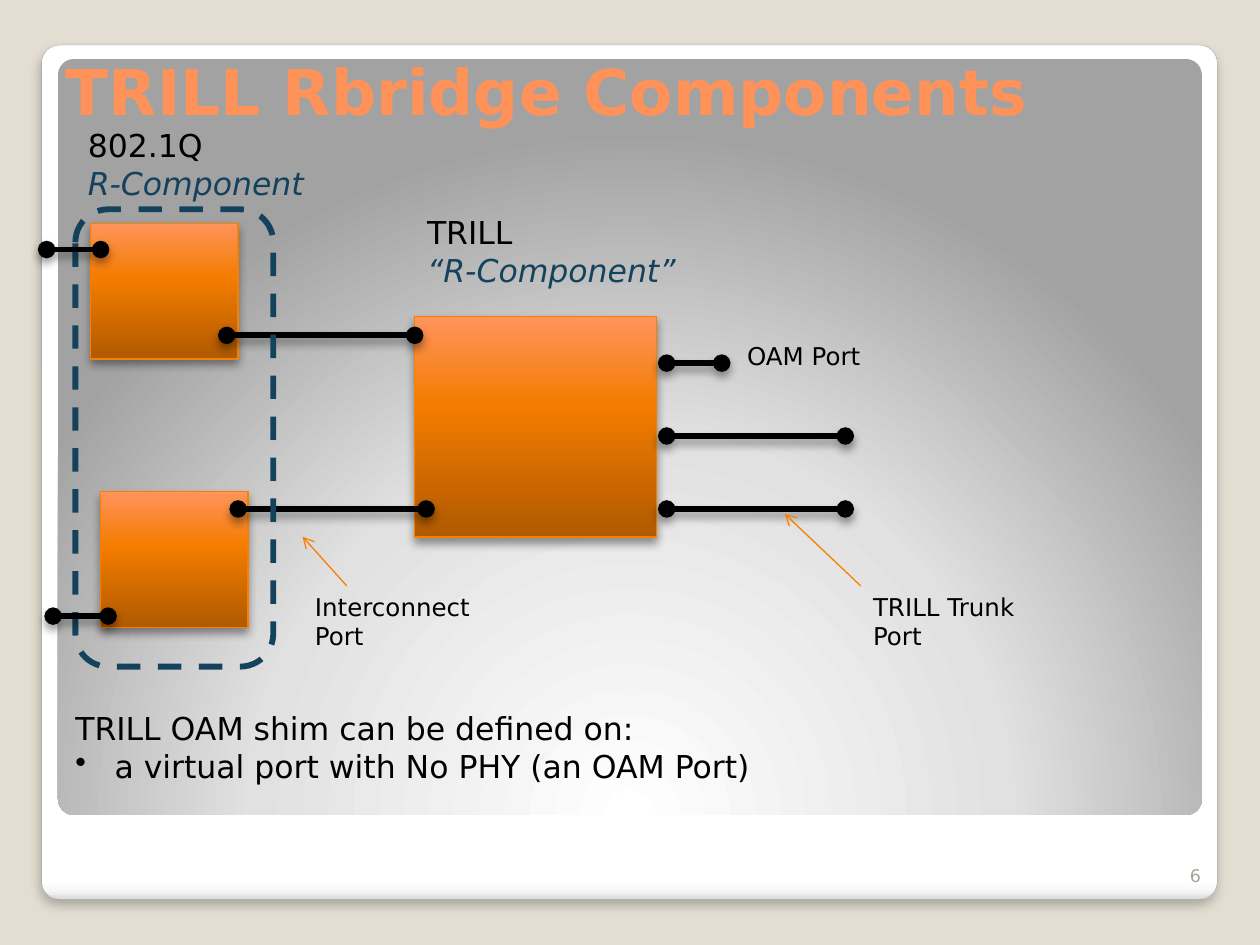
"""Build the slide that shows the components of a TRILL Rbridge."""
from dataclasses import dataclass, field
from typing import Any

from pptx import Presentation
from pptx.dml.color import RGBColor
from pptx.enum.dml import MSO_LINE_DASH_STYLE as Dash
from pptx.enum.shapes import MSO_CONNECTOR_TYPE as Conn, MSO_SHAPE as Geom
from pptx.enum.text import MSO_ANCHOR as Anchor, MSO_AUTO_SIZE as AutoSize, PP_ALIGN as Align
from pptx.oxml import parse_xml
from pptx.oxml.ns import nsdecls, qn
from pptx.oxml.xmlchemy import OxmlElement
from pptx.util import Cm, Pt

FONT = "DejaVu Sans"
SAND = RGBColor(0xE3, 0xDE, 0xD1)
BLACK = RGBColor(0x00, 0x00, 0x00)
NAVY = RGBColor(0x14, 0x42, 0x5D)
ORANGE = RGBColor(0xF9, 0x7F, 0x00)
PEACH = RGBColor(0xFF, 0x92, 0x58)
TAUPE = RGBColor(0xA8, 0xA4, 0x9B)
EDGE = RGBColor(0xA4, 0xA4, 0xA4)
WHITE = RGBColor(0xFF, 0xFF, 0xFF)
MIST = RGBColor(0xF7, 0xF7, 0xF7)
RIM = RGBColor(0xDA, 0xDA, 0xDA)
SILVER = RGBColor(0xE1, 0xE1, 0xE1)
GREY = RGBColor(0xA2, 0xA2, 0xA2)
RUST = RGBColor(0xB0, 0x5A, 0x00)
AMBER = RGBColor(0xF4, 0x7C, 0x00)
CORAL = RGBColor(0xFF, 0x94, 0x5C)


@dataclass(frozen=True)
class Gradient:
    stops: tuple[tuple[int, RGBColor], ...]
    shade: str


@dataclass(frozen=True)
class Shadow:
    alpha: int
    blur: float
    dist: float


@dataclass(frozen=True)
class Block:
    at: tuple[float, float, float, float]
    geom: Geom = Geom.RECTANGLE
    grad: Gradient | None = None
    line: RGBColor | None = None
    width: float = 0.75
    dash: Dash | None = None
    adj: float | None = None
    shadow: Shadow | None = None


@dataclass(frozen=True)
class Link:
    start: tuple[float, float]
    end: tuple[float, float]
    color: RGBColor
    width: float
    ends: dict[str, str]
    shadow: Shadow | None = None


@dataclass(frozen=True)
class Line:
    text: str
    format: dict[str, Any] = field(default_factory=dict)
    bullet: bool = False


@dataclass(frozen=True)
class Label:
    at: tuple[float, float, float, float]
    lines: tuple[Line, ...]
    size: float


BOX_SHADOW = Shadow(40, 5.2, 3)
CARD_SHADOW = Shadow(25, 6, 4)
BOX_GRAD = Gradient(((0, RUST), (60, AMBER), (100, CORAL)), '<a:lin ang="16200000" scaled="0"/>')
CARD_GRAD = Gradient(((0, WHITE), (98, WHITE), (99, MIST), (100, RIM)),
                     '<a:lin ang="5400000" scaled="0"/>')
GLOW_GRAD = Gradient(((0, WHITE), (55, SILVER), (100, GREY)),
                     '<a:path path="circle">'
                     '<a:fillToRect l="50000" t="175000" r="50000" b="-75000"/></a:path>')
EMPHASIS = {"italic": True, "color": NAVY}


def add_effects(sp_pr: Any, shadow: Shadow | None) -> None:
    """Append an effect list, empty when there is no shadow."""
    inner = "" if shadow is None else (
        f'<a:outerShdw blurRad="{Pt(shadow.blur)}" dist="{Pt(shadow.dist)}" dir="5400000" '
        f'rotWithShape="0"><a:srgbClr val="{BLACK}"><a:alpha val="{shadow.alpha * 1000}"/>'
        '</a:srgbClr></a:outerShdw>')
    sp_pr.append(parse_xml(f'<a:effectLst {nsdecls("a")}>{inner}</a:effectLst>'))


def add_block(s: Any, block: Block) -> None:
    """Draw a preset shape with its fill, outline and shadow."""
    sp = s.shapes.add_shape(block.geom, *map(Cm, block.at))
    if block.adj is not None:
        sp.adjustments[0] = block.adj
    sp.fill.background()
    sp_pr = sp._element.spPr
    if block.grad:
        stops = "".join(f'<a:gs pos="{pos * 1000}"><a:srgbClr val="{color}"/></a:gs>'
                        for pos, color in block.grad.stops)
        sp_pr.replace(sp_pr.find(qn("a:noFill")), parse_xml(
            f'<a:gradFill {nsdecls("a")} rotWithShape="1"><a:gsLst>{stops}</a:gsLst>'
            f'{block.grad.shade}</a:gradFill>'))
    if block.line is None:
        sp.line.fill.background()
    else:
        sp.line.color.rgb = block.line
        sp.line.width = Pt(block.width)
        if block.dash:
            sp.line.dash_style = block.dash
    add_effects(sp_pr, block.shadow)


def add_link(s: Any, link: Link) -> None:
    """Draw a straight connector with its end marks."""
    cxn = s.shapes.add_connector(Conn.STRAIGHT, *map(Cm, link.start + link.end))
    cxn.line.color.rgb = link.color
    cxn.line.width = Pt(link.width)
    ln = cxn.line._get_or_add_ln()
    for tag, kind in link.ends.items():
        end = OxmlElement(tag)
        end.set("type", kind)
        ln.append(end)
    add_effects(cxn._element.spPr, link.shadow)


def wire(x1: float, x2: float, y: float) -> Link:
    """Describe a level wire between two ports."""
    return Link((x1, y), (x2, y), BLACK, 3.35,
                {"a:headEnd": "oval", "a:tailEnd": "oval"}, BOX_SHADOW)


def pointer(start: tuple[float, float], end: tuple[float, float]) -> Link:
    """Describe a thin arrow from a label to a wire."""
    return Link(start, end, ORANGE, 0.75, {"a:tailEnd": "arrow"})


def write_line(p: Any, line: Line, size: float) -> None:
    """Fill a paragraph with one formatted run."""
    r = p.add_run()
    r.text = line.text
    look = {"name": FONT, "size": Pt(size), "color": BLACK, **line.format}
    r.font.color.rgb = look.pop("color")
    for name, value in look.items():
        setattr(r.font, name, value)
    if line.bullet:
        p_pr = p._p.get_or_add_pPr()
        p_pr.set("marL", str(Cm(0.79)))
        p_pr.set("indent", str(-Cm(0.79)))
        p_pr.append(parse_xml(f'<a:buChar {nsdecls("a")} char="•"/>'))


def add_label(s: Any, label: Label) -> Any:
    """Add a wrapped text box and return its text frame."""
    tf = s.shapes.add_textbox(*map(Cm, label.at)).text_frame
    tf.word_wrap = True
    tf.auto_size = AutoSize.SHAPE_TO_FIT_TEXT
    for i, line in enumerate(label.lines):
        write_line(tf.add_paragraph() if i else tf.paragraphs[0], line, label.size)
    return tf


def set_title(s: Any, text: str) -> None:
    """Place and format the title in front of the panels."""
    sp = s.shapes.title
    for name, value in zip(("left", "top", "width", "height"), (1.07, -0.2, 22.73, 2.92)):
        setattr(sp, name, Cm(value))
    tf = sp.text_frame
    for name, value in {"vertical_anchor": Anchor.BOTTOM, "word_wrap": True,
                        "auto_size": AutoSize.NONE}.items():
        setattr(tf, name, value)
    p = tf.paragraphs[0]
    p.alignment = Align.LEFT
    write_line(p, Line(text, {"bold": True, "color": PEACH}), 36)
    s.shapes._spTree.append(sp._element)


PANELS = (
    Block((0.84, 0.91, 23.7, 17.22), Geom.ROUNDED_RECTANGLE, CARD_GRAD, EDGE, 0.16,
          adj=0.021, shadow=CARD_SHADOW),
    Block((1.17, 1.19, 23.06, 15.24), Geom.ROUNDED_RECTANGLE, GLOW_GRAD, adj=0.021),
)
COMPONENTS = tuple(Block(at, grad=BOX_GRAD, line=ORANGE, shadow=BOX_SHADOW) for at in (
    (1.83, 4.5, 2.97, 2.74), (2.03, 9.91, 2.97, 2.74), (8.36, 6.38, 4.88, 4.45)))
GROUP = Block((1.52, 4.22, 3.99, 9.22), Geom.ROUNDED_RECTANGLE, line=NAVY, width=3.35,
              dash=Dash.DASH)
INNER_LINKS = (
    wire(4.57, 8.36, 6.76), wire(4.8, 8.59, 10.26),
    wire(13.44, 14.55, 7.32), wire(13.44, 17.04, 8.79), wire(13.44, 17.04, 10.26),
    pointer((6.99, 11.81), (6.1, 10.82)), pointer((17.35, 11.81), (15.82, 10.36)),
)
OUTER_LINKS = (wire(0.94, 2.03, 5.03), wire(1.07, 2.18, 12.42))
LABELS = (
    Label((1.52, 2.41, 5.72, 1.8), (Line("802.1Q"), Line("R-Component", EMPHASIS)), 18),
    Label((8.36, 4.17, 5.72, 1.8), (Line("TRILL"), Line("“R-Component”", EMPHASIS)), 18),
    Label((1.27, 14.17, 23.5, 1.8), (Line("TRILL OAM shim can be defined on:"), Line(
        "a virtual port with No PHY (an OAM Port)", bullet=True)), 18),
    Label((14.81, 6.76, 3.81, 0.86), (Line("OAM Port"),), 14),
    Label((6.1, 11.81, 3.81, 1.45), (Line("Interconnect Port"),), 14),
    Label((17.35, 11.81, 3.81, 1.45), (Line("TRILL Trunk Port"),), 14),
)
PAGE_NUMBER = Label((23.19, 16.97, 1.27, 1.02), (Line("6", {"color": TAUPE}),), 10)


def main() -> None:
    """Assemble and save the slide."""
    prs = Presentation()
    prs.slide_width, prs.slide_height = Cm(25.4), Cm(19.05)
    s = prs.slides.add_slide(prs.slide_layouts[5])
    s.background.fill.solid()
    s.background.fill.fore_color.rgb = SAND
    for panel in PANELS:
        add_block(s, panel)
    tf = add_label(s, PAGE_NUMBER)
    tf.auto_size = AutoSize.NONE
    tf.vertical_anchor = Anchor.BOTTOM
    tf.paragraphs[0].alignment = Align.RIGHT
    set_title(s, "TRILL Rbridge Components")
    for draw, items in ((add_block, COMPONENTS), (add_link, INNER_LINKS), (add_label, LABELS),
                        (add_block, (GROUP,)), (add_link, OUTER_LINKS)):
        for item in items:
            draw(s, item)
    prs.save("out.pptx")


if __name__ == "__main__":
    main()
